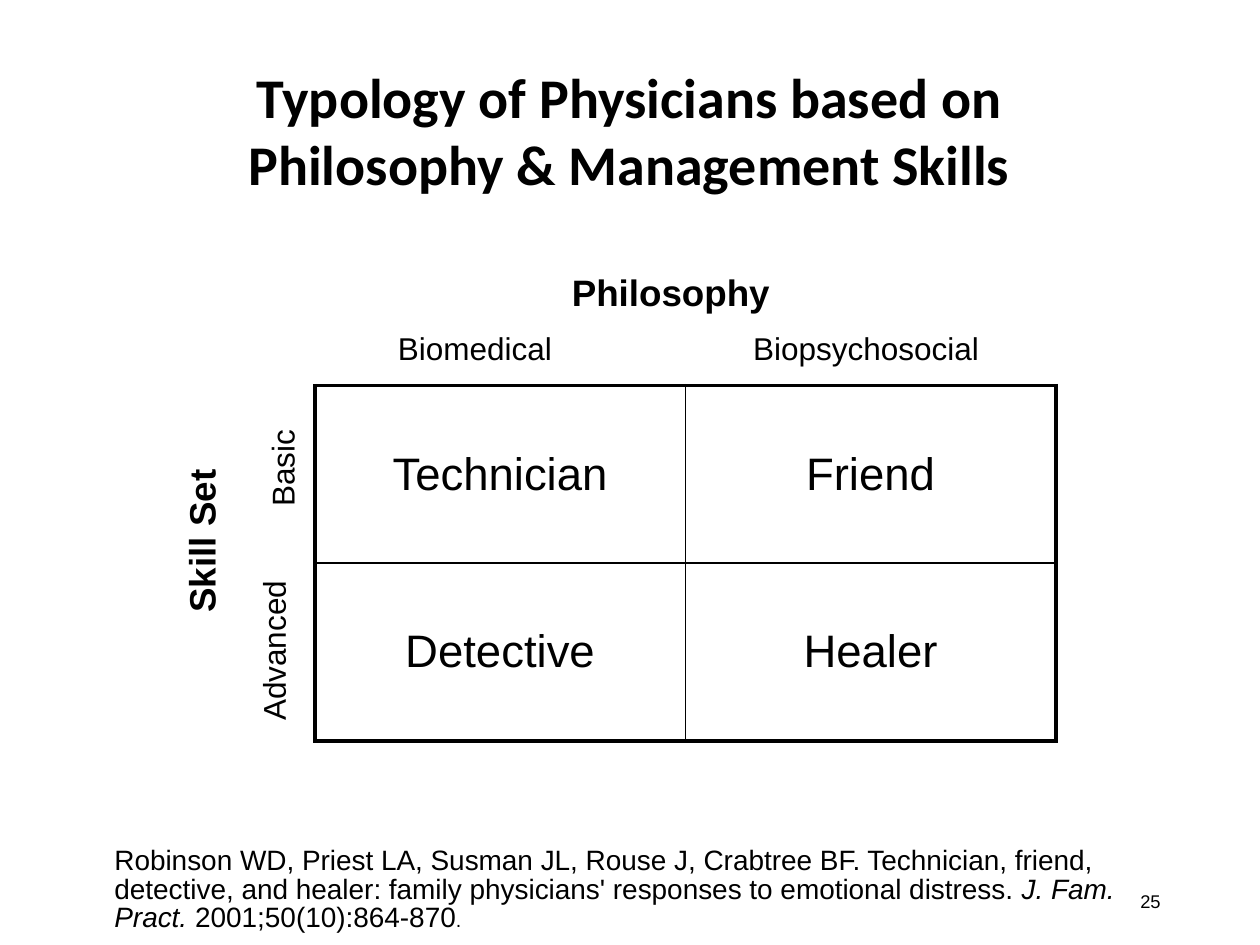
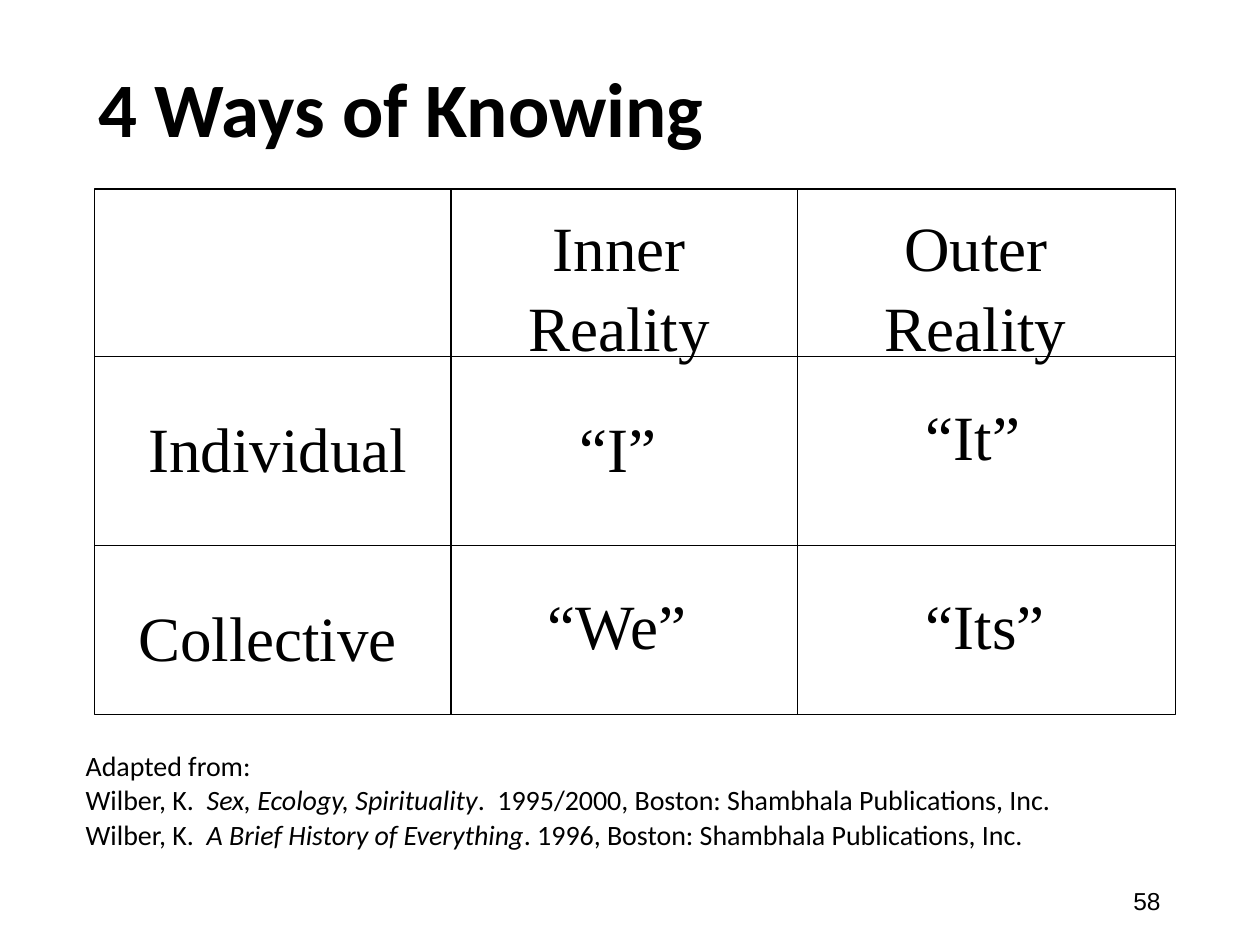
"""Build two slides: a typology of physicians and the four ways of knowing."""
import lxml.etree
import pptx
import pptx.dml.color
import pptx.enum.shapes
import pptx.enum.text
import pptx.oxml.ns
import pptx.util

Inches, Pt = pptx.util.Inches, pptx.util.Pt
ALIGN = pptx.enum.text.PP_ALIGN
MIDDLE = pptx.enum.text.MSO_ANCHOR.MIDDLE
qn = pptx.oxml.ns.qn
INK = "000000"


def set_font(font, name, size, bold=False, color=INK):
    """Format a font, with its colour as a hex string."""
    font.name, font.size, font.bold = name, Pt(size), bold
    font.color.rgb = pptx.dml.color.RGBColor.from_string(color)


def add_label(slide, text, box, name, size, bold=False, align=ALIGN.LEFT, wrap=True):
    """Add a one-paragraph text box and return its text frame."""
    frame = slide.shapes.add_textbox(*map(Inches, box)).text_frame
    frame.word_wrap = wrap
    paragraph = frame.paragraphs[0]
    paragraph.text = text
    paragraph.alignment = align
    set_font(paragraph.font, name, size, bold)
    return frame


presentation = pptx.Presentation()
presentation.slide_width, presentation.slide_height = Inches(10), Inches(7.5)

slides = []
for layout, title, box, size, align, number, number_size in [
    (5, "Typology of Physicians based on Philosophy & Management Skills",
     (1.62, 0.5, 6.75, 1.06), 32, ALIGN.CENTER, "25", 10.5),
    (1, "4 Ways of Knowing", (0.68, 0.44, 8.55, 0.81), 44, ALIGN.LEFT, "58", 14),
]:
    slide = presentation.slides.add_slide(presentation.slide_layouts[layout])
    shape = slide.shapes.title
    shape.left, shape.top, shape.width, shape.height = map(Inches, box)
    frame = shape.text_frame
    frame.text = title
    frame.vertical_anchor = MIDDLE
    frame.auto_size = pptx.enum.text.MSO_AUTO_SIZE.NONE
    frame.paragraphs[0].alignment = align
    set_font(frame.paragraphs[0].font, "Calibri", size, bold=True)
    frame = add_label(slide, number, (7.06, 6.95, 2.25, 0.4), "Arial", number_size,
                      align=ALIGN.RIGHT)
    frame.vertical_anchor = MIDDLE
    slides.append(slide)
typology, knowing = slides

physicians = [["Technician", "Friend"], ["Detective", "Healer"]]
table_shape = typology.shapes.add_table(2, 2, Inches(2.5), Inches(3.06), Inches(5.88), Inches(2.82))
table = table_shape.table
table.first_row = table.horz_banding = False
for row, names in enumerate(physicians):
    for column, physician in enumerate(names):
        cell = table.cell(row, column)
        cell.text = physician
        cell.vertical_anchor = MIDDLE
        paragraph = cell.text_frame.paragraphs[0]
        paragraph.alignment = ALIGN.CENTER
        set_font(paragraph.font, "Arial", 26)
        properties = cell._tc.get_or_add_tcPr()
        for side, is_outer in [("lnL", column == 0), ("lnR", column == 1),
                               ("lnT", row == 0), ("lnB", row == 1)]:
            border = lxml.etree.SubElement(properties, qn("a:" + side),
                                           w=str(Pt(2.25 if is_outer else 1)))
            fill = lxml.etree.SubElement(border, qn("a:solidFill"))
            lxml.etree.SubElement(fill, qn("a:srgbClr"), val=INK)
        cell.fill.background()

for text, box, size, bold in [
    ("Philosophy", (4.44, 2.09, 2, 0.45), 21, True),
    ("Biomedical", (3.06, 2.56, 1.44, 0.4), 18, False),
    ("Biopsychosocial", (5.88, 2.56, 2.14, 0.4), 18, False),
]:
    add_label(typology, text, box, "Arial", size, bold)

for text, box, size, bold in [
    ("Skill Set", (1.37, 3.58, 0.56, 1.38), 21, True),
    ("Basic", (2.04, 3.31, 0.5, 0.81), 18, False),
    ("Advanced", (1.97, 4.44, 0.5, 1.38), 18, False),
]:
    frame = add_label(typology, text, box, "Arial", size, bold)
    frame._txBody.bodyPr.set("vert", "vert270")

frame = add_label(
    typology,
    "Robinson WD, Priest LA, Susman JL, Rouse J, Crabtree BF. Technician, friend, "
    "detective, and healer: family physicians' responses to emotional distress. ",
    (0.81, 6.68, 8.5, 0.79), "Arial", 16)
paragraph = frame.paragraphs[0]
paragraph.line_spacing = 0.85
for text, italic, size in [("J. Fam. Pract. ", True, 16),
                           ("2001;50(10):864-870", False, 16), (".", False, 11.2)]:
    run = paragraph.add_run()
    run.text = text
    run.font.italic, run.font.size = italic, Pt(size)

body = knowing.placeholders[1]
body.left, body.top, body.width, body.height = map(Inches, (0.58, 5.92, 8.92, 1.33))
body.text_frame.auto_size = pptx.enum.text.MSO_AUTO_SIZE.NONE
sources = [
    [("Adapted from:", False)],
    [("Wilber, K.  ", False), ("Sex, Ecology, Spirituality", True),
     (".  1995/2000, Boston: Shambhala Publications, Inc.", False)],
    [("Wilber, K.  ", False), ("A Brief History of Everything", True),
     (". 1996, Boston: Shambhala Publications, Inc.", False)],
]
for index, parts in enumerate(sources):
    paragraph = body.text_frame.add_paragraph() if index else body.text_frame.paragraphs[0]
    properties = paragraph._p.get_or_add_pPr()
    properties.set("marL", str(Inches(0.25)))
    properties.set("indent", str(Inches(-0.25)))
    lxml.etree.SubElement(properties, qn("a:buNone"))
    paragraph.line_spacing = 0.9
    paragraph.space_before = Pt(2.4 if index else 0)
    set_font(paragraph.font, "Calibri", 16)
    for text, italic in parts:
        run = paragraph.add_run()
        run.text = text
        run.font.italic = italic

left, top, right, bottom = 0.75, 1.5, 9.33, 5.67
grid = knowing.shapes.add_shape(pptx.enum.shapes.MSO_SHAPE.RECTANGLE, Inches(left), Inches(top),
                                Inches(right - left), Inches(bottom - top))
grid.shadow.inherit = False
grid.fill.background()
row_lines = [(left, y, right, y) for y in (2.83, 4.33)]
column_lines = [(x, top, x, bottom) for x in (3.58, 6.33)]
outlines = [grid]
for ends in row_lines + column_lines:
    connector = knowing.shapes.add_connector(pptx.enum.shapes.MSO_CONNECTOR.STRAIGHT,
                                             *map(Inches, ends))
    outlines.append(connector)
for outline in outlines:
    outline.line.color.rgb = pptx.dml.color.RGBColor.from_string(INK)
    outline.line.width = Pt(0.75)
for connector in outlines[1:]:
    lxml.etree.SubElement(connector._element.spPr, qn("a:effectLst"))

for text, box, is_heading in [
    ("Inner Reality", (3.58, 1.58, 2.67, 1.3), True),
    ("Outer Reality", (6.33, 1.58, 2.83, 1.3), True),
    ("Individual", (1.08, 3.17, 2.26, 0.7), False),
    ("“I”", (4.5, 3.17, 0.81, 0.7), False),
    ("“It”", (7.25, 3.08, 0.95, 0.7), False),
    ("Collective", (1, 4.67, 2.26, 0.7), False),
    ("“We”", (4.25, 4.58, 1.34, 0.7), False),
    ("“Its”", (7.25, 4.58, 1.15, 0.7), False),
]:
    frame = add_label(knowing, text, box, "Times New Roman", 36, wrap=is_heading,
                      align=ALIGN.CENTER if is_heading else ALIGN.LEFT)
    frame.paragraphs[0].line_spacing = 1.05

presentation.save("out.pptx")
